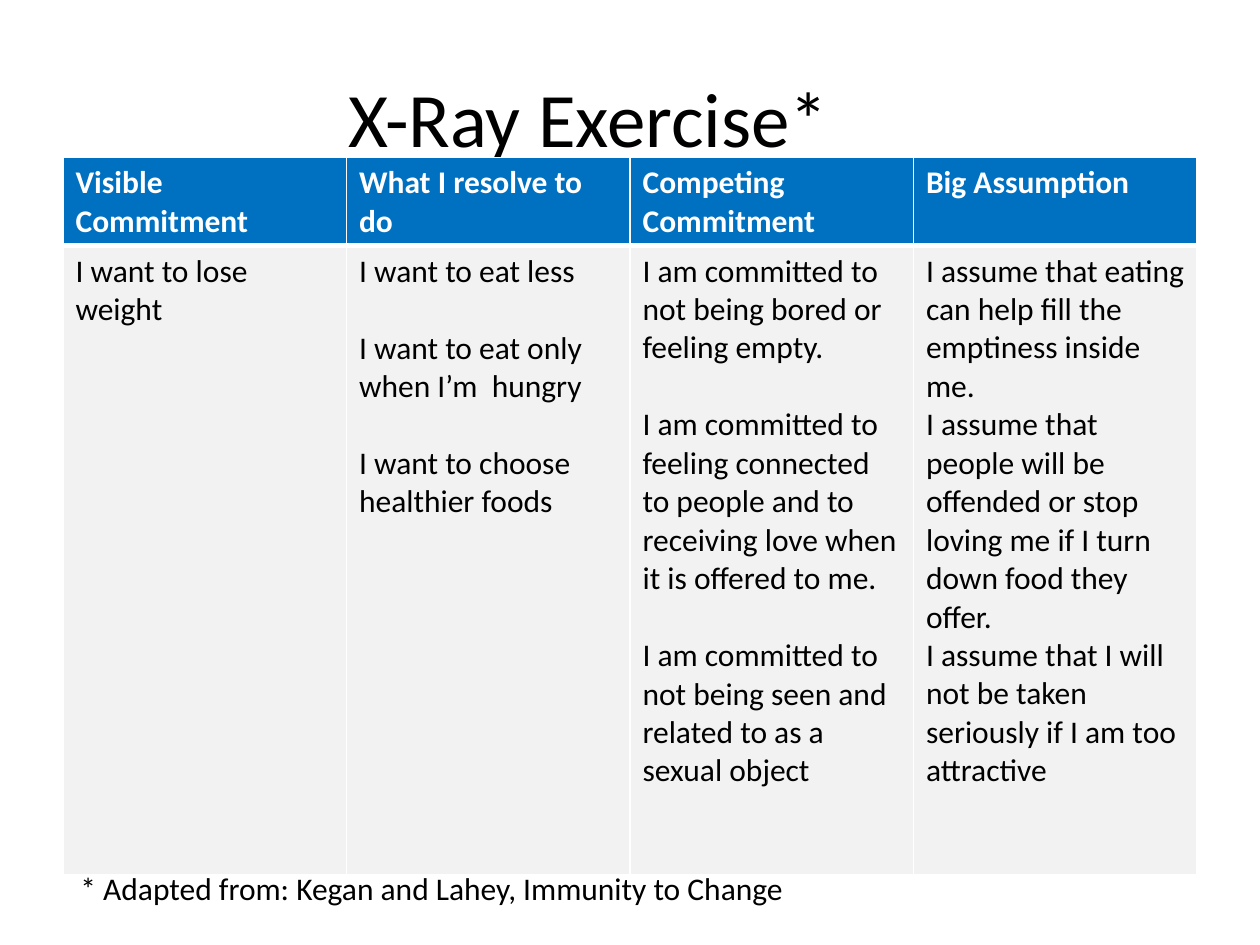
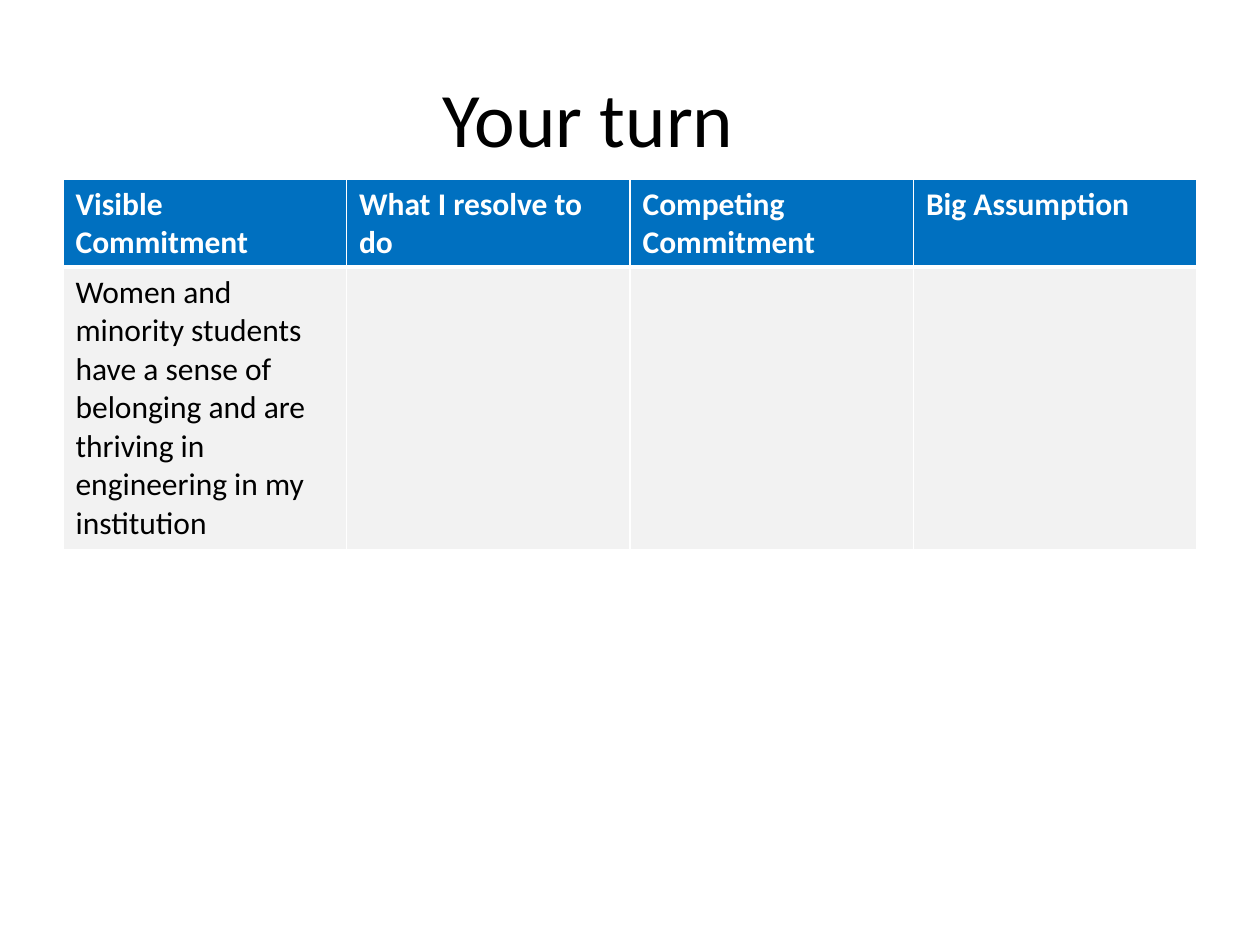
"""Build two slides that share a four-column commitment table."""
from dataclasses import dataclass

from lxml import etree
from pptx import Presentation, util as u
from pptx.dml.color import RGBColor
from pptx.enum import text as t
from pptx.oxml import ns


@dataclass(frozen=True)
class Theme:
    font: str = "Calibri"
    ink: str = "000000"
    paper: str = "FFFFFF"
    header: str = "0070C0"
    body: str = "F2F2F2"
    title_size: int = 44
    text_size: int = 18
    blank_line: int = 22
    thin: int = 1
    thick: int = 3


theme = Theme()
headings = ["Visible Commitment", "What I resolve to do", "Competing Commitment", "Big Assumption"]
exercises = [
    {
        "title": "X-Ray Exercise*",
        "top": 12.5,
        "body_height": 49.9,
        "answers": [
            ["I want to lose weight"],
            [
                "I want to eat less",
                "I want to eat only when I’m  hungry",
                "I want to choose healthier foods",
            ],
            [
                "I am committed to not being bored or feeling empty.",
                "I am committed to feeling connected to people and to receiving love when it is offered to me.",
                "I am committed to not being seen and related to as a sexual object",
            ],
            [
                "I assume that eating can help fill the emptiness inside me.",
                "I assume that people will be offended or stop loving me if I turn down food they offer.",
                "I assume that I will not be taken seriously if I am too attractive",
            ],
        ],
        "spacing": [0, theme.blank_line, theme.blank_line, 0],
        "source": "* Adapted from: Kegan and Lahey, Immunity to Change",
    },
    {
        "title": "Your turn",
        "top": 14.2,
        "body_height": 22.4,
        "answers": [
            [
                "Women and minority students have a sense of belonging "
                "and are thriving in engineering in my institution"
            ],
            [], [], [],
        ],
        "spacing": [0, 0, 0, 0],
        "source": None,
    },
]

deck = Presentation()
deck.slide_width, deck.slide_height = u.Inches(10), u.Inches(7.5)
share = deck.slide_width / 100
table_left, table_width, header_height = 5, 90, 7


def write(frame, lines, size, color, bold=False, gap=0):
    """Fill a text frame with one styled paragraph per line."""
    frame.text = "\n".join(lines)
    for index, para in enumerate(frame.paragraphs):
        para.space_before = u.Pt(gap if index else 0)
        for span in para.runs:
            span.font.name = theme.font
            span.font.size = u.Pt(size)
            span.font.bold = bold
            span.font.color.rgb = RGBColor.from_string(color)


def paint(cell, fill, bottom):
    """Give a cell its white borders and its fill."""
    properties = cell._tc.get_or_add_tcPr()
    for side in "LRTB":
        width = bottom if side == "B" else theme.thin
        line = etree.SubElement(properties, ns.qn(f"a:ln{side}"), w=str(u.Pt(width)))
        solid = etree.SubElement(line, ns.qn("a:solidFill"))
        etree.SubElement(solid, ns.qn("a:srgbClr"), val=theme.paper)
    cell.fill.solid()
    cell.fill.fore_color.rgb = RGBColor.from_string(fill)


for exercise in exercises:
    page = deck.slides.add_slide(deck.slide_layouts[6])

    area = [int(share * part) for part in (19.2, 3, 55, 12.5)]
    title = page.shapes.add_textbox(*area).text_frame
    title.word_wrap = True
    title.vertical_anchor = t.MSO_ANCHOR.MIDDLE
    write(title, [exercise["title"]], theme.title_size, theme.ink)
    title.paragraphs[0].alignment = t.PP_ALIGN.CENTER

    heights = [header_height, exercise["body_height"]]
    area = [int(share * part) for part in (table_left, exercise["top"], table_width, sum(heights))]
    table = page.shapes.add_table(len(heights), len(headings), *area).table
    for row, height in zip(table.rows, heights):
        row.height = int(share * height)
    for column, heading in enumerate(headings):
        head, answer = table.cell(0, column), table.cell(1, column)
        paint(head, theme.header, theme.thick)
        write(head.text_frame, [heading], theme.text_size, theme.paper, bold=True)
        paint(answer, theme.body, theme.thin)
        write(answer.text_frame, exercise["answers"][column], theme.text_size, theme.ink,
              gap=exercise["spacing"][column])

    if exercise["source"]:
        area = [int(share * part) for part in (5.4, 68.5, 58.5, 4)]
        source = page.shapes.add_textbox(*area).text_frame
        source.word_wrap = False
        source.auto_size = t.MSO_AUTO_SIZE.SHAPE_TO_FIT_TEXT
        write(source, [exercise["source"]], theme.text_size, theme.ink)

deck.save("out.pptx")
